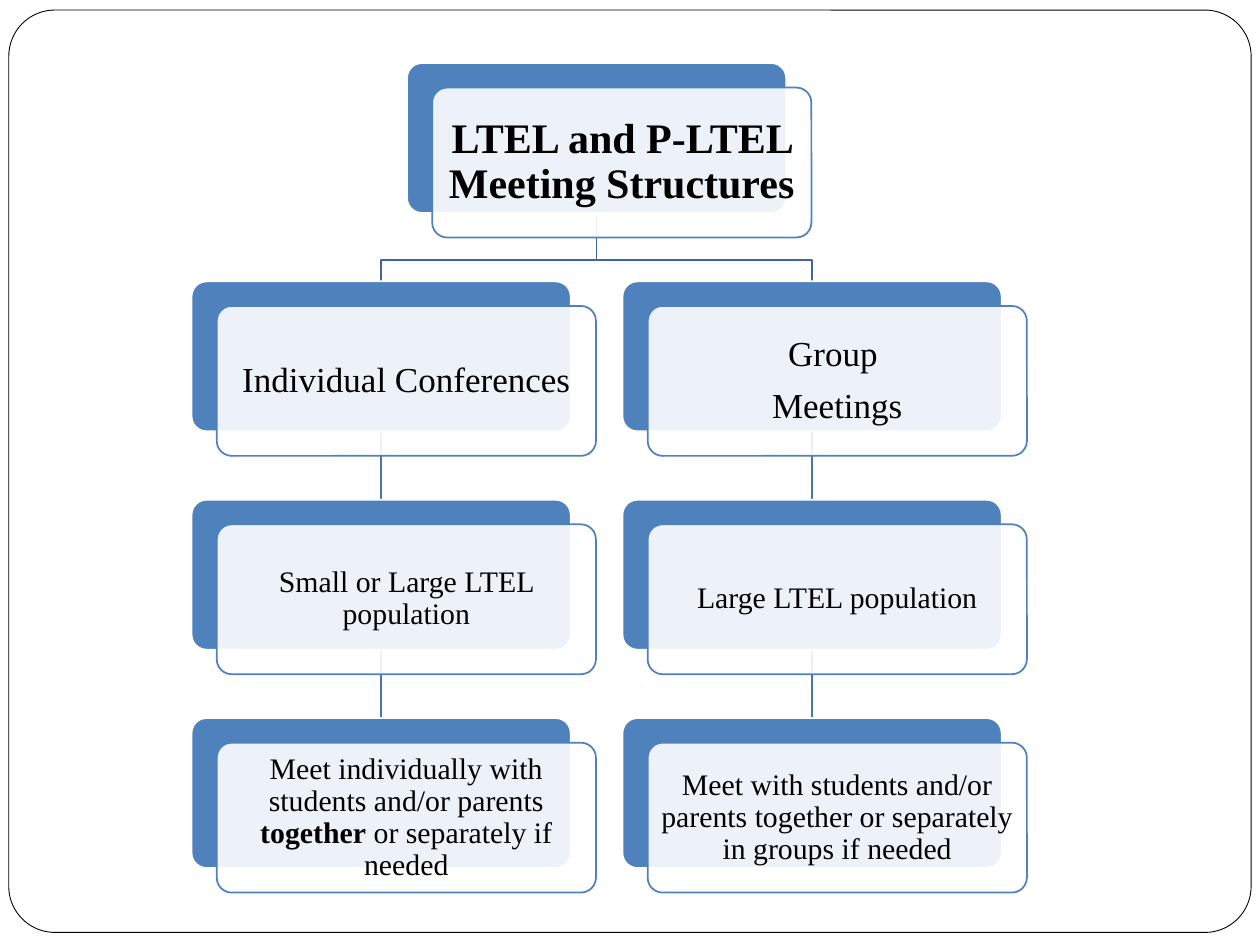
from lxml import etree
from pptx import Presentation
from pptx.dml.color import RGBColor
from pptx.enum.shapes import MSO_CONNECTOR as Link, MSO_SHAPE as Kind
from pptx.enum.text import MSO_ANCHOR as Anchor, PP_ALIGN as Align
from pptx.oxml.ns import qn
from pptx.util import Inches, Pt

FONT = "Times New Roman"
BLUE, WHITE, BLACK = "4F81BD", "FFFFFF", "000000"
CARD_W, CARD_H = 3.01, 1.19
SHIFT_X, SHIFT_Y = 0.2, 0.195
LEFT, TOP = 1.52, 0.5
COL, ROW = 3.42, 1.733

# column, row, text size, inset, paragraphs as runs of (text, bold)
CARDS = [
    (0.5, 0, 24, 0.1, [[("LTEL and P-LTEL Meeting Structures", True)]]),
    (0, 1, 20, 0.08, [[("Individual Conferences", False)]]),
    (0, 2, 17, 0.07, [[("Small or Large LTEL population", False)]]),
    (0, 3, 17, 0.07, [[("Meet individually with students and/or parents ", False),
                       ("together", True),
                       (" or separately if needed", False)]]),
    (1, 1, 20, 0.08, [[("Group ", False)], [("Meetings", False)]]),
    (1, 2, 17, 0.07, [[("Large LTEL population", False)]]),
    (1, 3, 17, 0.07, [[("Meet with students and/or parents together or "
                        "separately in groups if needed", False)]]),
]


def rgb(code):
    return RGBColor.from_string(code)


def spot(col, row):
    """Left and top of the back plate in a grid cell, in inches."""
    return LEFT + col * COL, TOP + row * ROW


def add_box(slide, x, y, w, h, fill, line, width=1, adj=0.1):
    box = slide.shapes.add_shape(Kind.ROUNDED_RECTANGLE, Inches(x), Inches(y),
                                 Inches(w), Inches(h))
    box.adjustments[0] = adj
    box.shadow.inherit = False
    box.fill.solid()
    box.fill.fore_color.rgb = rgb(fill)
    box.line.color.rgb = rgb(line)
    box.line.width = Pt(width)
    return box


def fade(box, share):
    """Make a solid fill partly see-through."""
    color = box.fill._xPr.find(f"{qn('a:solidFill')}/{qn('a:srgbClr')}")
    etree.SubElement(color, qn("a:alpha")).set("val", str(share * 1000))


def add_text(box, paras, size, inset):
    frame = box.text_frame
    frame.word_wrap = True
    frame.vertical_anchor = Anchor.MIDDLE
    frame.margin_left = frame.margin_right = Inches(inset)
    frame.margin_top = frame.margin_bottom = Inches(inset)
    for i, runs in enumerate(paras):
        para = frame.add_paragraph() if i else frame.paragraphs[0]
        para.alignment = Align.CENTER
        para.line_spacing = 0.9
        para.space_before = Pt(8 if i else 0)
        for text, bold in runs:
            run = para.add_run()
            run.text = text
            run.font.name = FONT
            run.font.size = Pt(size)
            run.font.bold = bold
            run.font.color.rgb = rgb(BLACK)


def add_card(slide, col, row, size, inset, paras):
    x, y = spot(col, row)
    add_box(slide, x, y, CARD_W, CARD_H, BLUE, WHITE)
    front = add_box(slide, x + SHIFT_X, y + SHIFT_Y, CARD_W, CARD_H, WHITE, BLUE)
    fade(front, 90)
    add_text(front, paras, size, inset)


def add_stem(slide, col, row):
    """Straight line from a card down to the next one."""
    x, y = spot(col, row)
    mid = Inches(x + CARD_W / 2)
    stem = slide.shapes.add_connector(Link.STRAIGHT, mid, Inches(y + CARD_H),
                                      mid, Inches(y + ROW))
    stem.line.color.rgb = rgb("4875AC")
    stem.line.width = Pt(1)
    etree.SubElement(stem._element.spPr, qn("a:effectLst"))


def add_branch(slide, col):
    """Bent line from the top card to the head of a column."""
    x, y = spot(0.5, 0)
    end, low = spot(col, 1)
    start, end = x + CARD_W / 2, end + CARD_W / 2
    turn = low - 0.17
    pen = slide.shapes.build_freeform(Inches(start), Inches(y + CARD_H))
    pen.add_line_segments([(Inches(px), Inches(py)) for px, py in
                           ((start, turn), (end, turn), (end, low))], close=False)
    branch = pen.convert_to_shape()
    branch.shadow.inherit = False
    branch.fill.background()
    branch.line.color.rgb = rgb("3F6797")
    branch.line.width = Pt(1)


def main():
    deck = Presentation()
    deck.slide_width, deck.slide_height = Inches(10), Inches(7.5)
    slide = deck.slides.add_slide(deck.slide_layouts[6])
    add_box(slide, 0.07, 0.08, 9.86, 7.32, WHITE, BLACK, 0.5, 0.05)
    for col in (0, 1):
        add_branch(slide, col)
        for row in (1, 2):
            add_stem(slide, col, row)
    for card in CARDS:
        add_card(slide, *card)
    deck.save("out.pptx")


if __name__ == "__main__":
    main()
